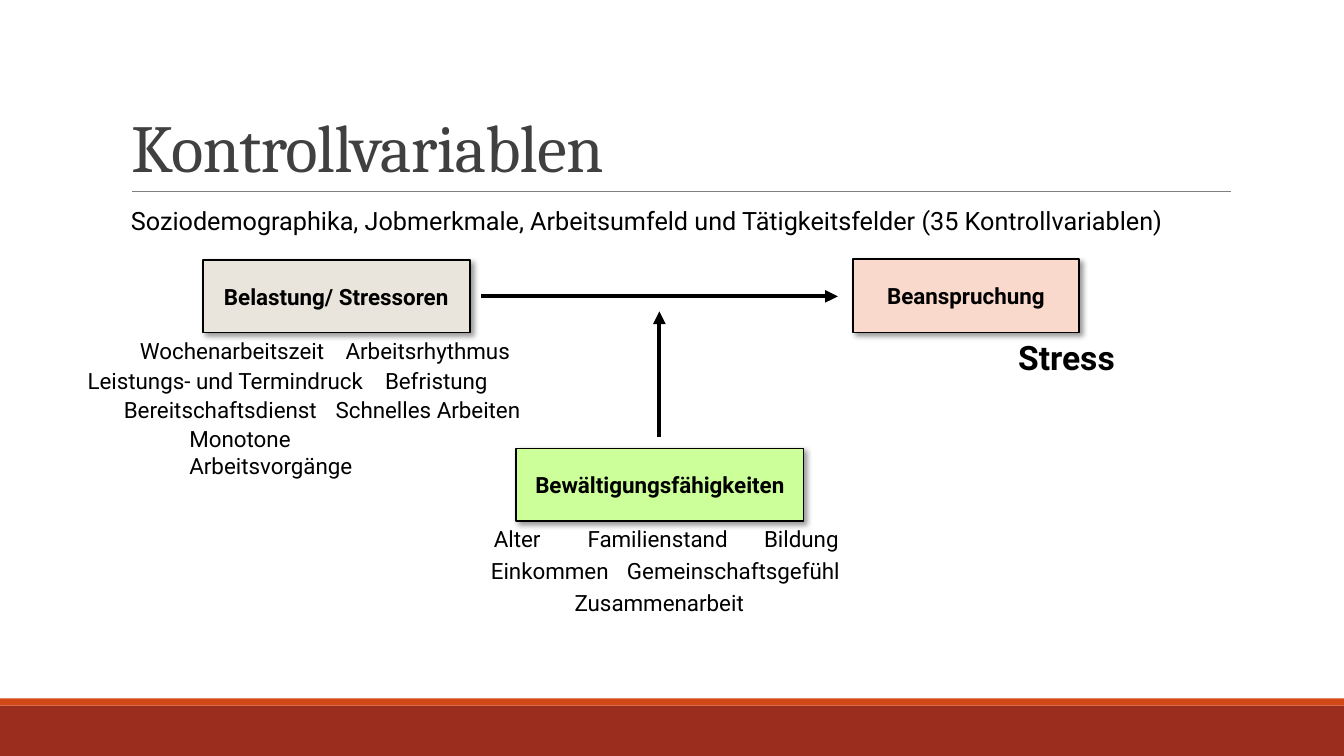
"""Build the slide on control variables in the stress model."""
from lxml import etree
from pptx import Presentation
from pptx.dml.color import RGBColor
from pptx.enum.shapes import MSO_CONNECTOR, MSO_SHAPE
from pptx.enum.text import MSO_ANCHOR, MSO_AUTO_SIZE, PP_ALIGN
from pptx.oxml import parse_xml
from pptx.oxml.ns import nsdecls, qn
from pptx.util import Pt

RECTANGLE = MSO_SHAPE.RECTANGLE
STRAIGHT = MSO_CONNECTOR.STRAIGHT
LEFT, CENTER = PP_ALIGN.LEFT, PP_ALIGN.CENTER
TOP, MIDDLE, BOTTOM = MSO_ANCHOR.TOP, MSO_ANCHOR.MIDDLE, MSO_ANCHOR.BOTTOM
NO_AUTOFIT = MSO_AUTO_SIZE.NONE

EMU_PER_PX = 9144
SLIDE_SIZE = (1333, 750)
TITLE_ONLY = 5
BLACK = "000000"

TITLE = ("Kontrollvariablen", (120, 31, 1100, 159))
SUBTITLE = (
    "Soziodemographika, Jobmerkmale, Arbeitsumfeld und Tätigkeitsfelder (35 Kontrollvariablen)",
    (120, 199, 1142, 40),
)
OUTCOME = ("Stress", (1000, 329, 137, 50))
FOOTER_BARS = [("9B2D1F", (0, 700, 1333, 50)), ("D34817", (0, 693, 1333, 7))]
MODEL_BOXES = [
    ("Belastung/ Stressoren", "E9E5DC", (201, 258, 265, 72)),
    ("Beanspruchung", "FAD9CD", (846, 257, 224, 73)),
    ("Bewältigungsfähigkeiten", "CCFF99", (512, 445, 285, 72)),
]
TITLE_RULE = (131, 190, 1221, 190)
ARROWS = [(477, 294, 831, 294), (654, 434, 654, 309)]

VARIABLE_HEIGHT = 37
VARIABLE_GROUPS = [
    {
        "top": 330,
        "pitch": 29,
        "rows": [
            [("Wochenarbeitszeit", 129, 234), ("Arbeitsrhythmus", 333, 234)],
            [("Leistungs- und Termindruck", 77, 306), ("Befristung", 372, 132)],
            [("Bereitschaftsdienst", 113, 234), ("Schnelles Arbeiten", 323, 234)],
            [("Monotone Arbeitsvorgänge", 178, 284)],
        ],
    },
    {
        "top": 516,
        "pitch": 32,
        "rows": [
            [("Alter", 480, 77), ("Familienstand", 573, 166), ("Bildung", 748, 107)],
            [("Einkommen", 477, 140), ("Gemeinschaftsgefühl", 612, 234)],
            [("Zusammenarbeit", 560, 193)],
        ],
    },
]

TITLE_FONT = {"name": "Cambria", "size": Pt(48), "bold": False}
SUBTITLE_FONT = {"name": "Roboto", "size": Pt(18), "bold": False}
BOX_FONT = {"name": "Roboto", "size": Pt(16), "bold": True}
VARIABLE_FONT = {"name": "Roboto", "size": Pt(16), "bold": False}
OUTCOME_FONT = {"name": "Roboto", "size": Pt(24), "bold": True}

BOX_SHADOW = (
    f'<a:effectLst {nsdecls("a")}><a:outerShdw blurRad="50800" dist="38100" '
    'dir="2700000" algn="tl" rotWithShape="0"><a:srgbClr val="000000">'
    '<a:alpha val="40000"/></a:srgbClr></a:outerShdw></a:effectLst>'
)


def emu(lengths):
    return [length * EMU_PER_PX for length in lengths]


def color(value):
    return RGBColor.from_string(value)


def set_text(shape, text, font_format, text_color=BLACK, align=LEFT, anchor=TOP):
    frame = shape.text_frame
    frame.word_wrap = True
    frame.auto_size = NO_AUTOFIT
    frame.vertical_anchor = anchor
    paragraph = frame.paragraphs[0]
    paragraph.alignment = align
    run = paragraph.add_run()
    run.text = text
    for name, value in font_format.items():
        setattr(run.font, name, value)
    run.font.color.rgb = color(text_color)
    return paragraph, run


def add_title(slide):
    text, bounds = TITLE
    shape = slide.shapes.title
    for name, value in zip(("left", "top", "width", "height"), emu(bounds)):
        setattr(shape, name, value)
    paragraph, run = set_text(shape, text, TITLE_FONT, "404040", anchor=BOTTOM)
    paragraph.line_spacing = 0.85
    run.font._element.set("spc", "-50")


def add_label(slide, text, bounds, font_format):
    set_text(slide.shapes.add_textbox(*emu(bounds)), text, font_format)


def add_rectangle(slide, fill_color, bounds):
    shape = slide.shapes.add_shape(RECTANGLE, *emu(bounds))
    shape.shadow.inherit = False
    shape.fill.solid()
    shape.fill.fore_color.rgb = color(fill_color)
    shape.line.fill.background()
    return shape


def add_model_box(slide, text, fill_color, bounds):
    shape = add_rectangle(slide, fill_color, bounds)
    shape.line.color.rgb = color(BLACK)
    shape.line.width = Pt(1.25)
    properties = shape._element.spPr
    properties.replace(properties.find(qn("a:effectLst")), parse_xml(BOX_SHADOW))
    set_text(shape, text, BOX_FONT, align=CENTER, anchor=MIDDLE)


def add_line(slide, points, line_color, width, arrow=False):
    connector = slide.shapes.add_connector(STRAIGHT, *emu(points))
    connector.line.color.rgb = color(line_color)
    connector.line.width = Pt(width)
    properties = connector._element.spPr
    if arrow:
        line = properties.find(qn("a:ln"))
        etree.SubElement(line, qn("a:tailEnd"), type="triangle")
    etree.SubElement(properties, qn("a:effectLst"))


def add_variables(slide, group):
    for index, row in enumerate(group["rows"]):
        top = group["top"] + index * group["pitch"]
        for text, left, width in row:
            add_label(slide, text, (left, top, width, VARIABLE_HEIGHT), VARIABLE_FONT)


def main():
    presentation = Presentation()
    presentation.slide_width, presentation.slide_height = emu(SLIDE_SIZE)
    slide = presentation.slides.add_slide(presentation.slide_layouts[TITLE_ONLY])
    for fill_color, bounds in FOOTER_BARS:
        add_rectangle(slide, fill_color, bounds)
    add_line(slide, TITLE_RULE, "808080", 0.5)
    add_title(slide)
    add_label(slide, *SUBTITLE, SUBTITLE_FONT)
    for box in MODEL_BOXES:
        add_model_box(slide, *box)
    for points in ARROWS:
        add_line(slide, points, BLACK, 3, arrow=True)
    for group in VARIABLE_GROUPS:
        add_variables(slide, group)
    add_label(slide, *OUTCOME, OUTCOME_FONT)
    presentation.save("out.pptx")


if __name__ == "__main__":
    main()
